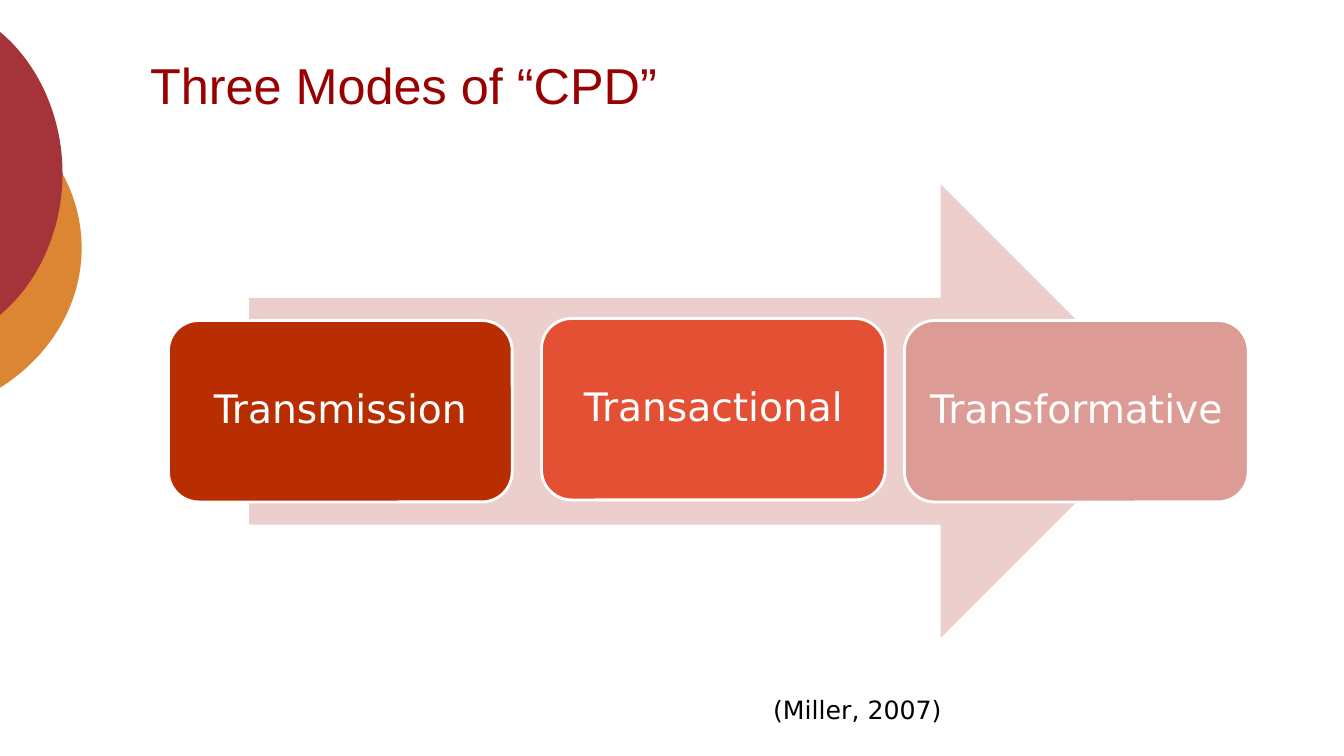
from dataclasses import dataclass

from lxml.etree import SubElement as Sub
from pptx import Presentation
from pptx.dml.color import RGBColor
from pptx.enum.shapes import MSO_SHAPE as SHAPE
from pptx.enum.text import MSO_ANCHOR as ANCHOR, MSO_AUTO_SIZE as AUTO, PP_ALIGN as ALIGN
from pptx.oxml.ns import qn
from pptx.util import Pt

PX = 9144


@dataclass(frozen=True)
class Theme:
    """Colours, fonts and type sizes of the slide."""
    orange: str = "DC8633"
    crimson: str = "A4343A"
    title: str = "990000"
    arrow: str = "ECCECC"
    modes: tuple = ("B92E00", "E35033", "DD9B95")
    white: str = "FFFFFF"
    black: str = "000000"
    title_font: str = "Arial"
    body_font: str = "DejaVu Sans"
    title_pt: int = 36
    mode_pt: int = 28
    cite_pt: int = 18


THEME = Theme()


def px(*lengths):
    """Turn pixel lengths into EMU."""
    return [n * PX for n in lengths]


def paint(sp, color, line=None):
    """Give a shape a plain fill, an optional outline and no shadow."""
    sp.shadow.inherit = False
    sp.fill.solid()
    sp.fill.fore_color.rgb = RGBColor.from_string(color)
    if line:
        sp.line.color.rgb = RGBColor.from_string(line)
        sp.line.width = Pt(2)
    else:
        sp.line.fill.background()


def write(sp, text, font, size, color, align=ALIGN.LEFT, anchor=ANCHOR.TOP):
    """Write one styled paragraph into a shape and return it."""
    tf = sp.text_frame
    tf.word_wrap = True
    tf.vertical_anchor = anchor
    p = tf.paragraphs[0]
    p.text = text
    p.alignment = align
    p.font.name = font
    p.font.size = Pt(size)
    p.font.color.rgb = RGBColor.from_string(color)
    return p


def add_edge_disc(s, box, curve, color):
    """Draw a disc cut by the left edge from the Bezier curve of its upper half."""
    left, top, width, height = box
    right, bottom = left + width, top + height
    builder = s.shapes.build_freeform(left, top, scale=PX)
    builder.add_line_segments([(right, top), (right, bottom), (left, bottom)])
    sp = builder.convert_to_shape()
    paint(sp, color)

    middle = curve[-1][1]
    lower = [(x, 2 * middle - y) for x, y in curve[-2::-1]]
    outline = next(sp.element.iter(qn("a:path")))
    for child in list(outline):
        outline.remove(child)
    for tag, points in (("moveTo", curve[:1]), ("cubicBezTo", curve[1:]),
                        ("cubicBezTo", lower), ("close", ())):
        step = Sub(outline, qn(f"a:{tag}"))
        for x, y in points:
            Sub(step, qn("a:pt"), x=str(x - left), y=str(y - top))


def add_label(s, box, text, **style):
    """Add a text box with one paragraph and return its text frame."""
    sp = s.shapes.add_textbox(*px(*box))
    write(sp, text, **style)
    return sp.text_frame


def add_mode(s, left, top, text, color):
    """Add a rounded box naming one mode."""
    sp = s.shapes.add_shape(SHAPE.ROUNDED_RECTANGLE, *px(left, top, 341, 180))
    paint(sp, color, THEME.white)
    tf = sp.text_frame
    tf.margin_left, tf.margin_top, tf.margin_right, tf.margin_bottom = px(12, 12, 12, 12)
    p = write(sp, text, THEME.body_font, THEME.mode_pt, THEME.white,
              ALIGN.CENTER, ANCHOR.MIDDLE)
    p.line_spacing = 0.9


def main():
    """Build and save the slide."""
    prs = Presentation()
    prs.slide_width, prs.slide_height = px(1333, 750)
    s = prs.slides.add_slide(prs.slide_layouts[6])

    add_edge_disc(s, (-310, 75, 391, 342),
                  ((-2, 106), (50, 138), (81, 190), (81, 246)), THEME.orange)
    add_edge_disc(s, (-233, 0, 294, 345),
                  ((-2, 30), (38, 62), (62, 116), (62, 172)), THEME.crimson)
    add_label(s, (139, 36, 1126, 95), "Three Modes of “CPD”", font=THEME.title_font,
              size=THEME.title_pt, color=THEME.title, anchor=ANCHOR.MIDDLE)

    arrow = s.shapes.add_shape(SHAPE.RIGHT_ARROW, *px(247, 183, 911, 450))
    paint(arrow, THEME.arrow)
    modes = ((167, 318, "Transmission"), (537, 316, "Transactional"),
             (897, 318, "Transformative"))
    for (left, top, text), color in zip(modes, THEME.modes):
        add_mode(s, left, top, text, color)

    tf = add_label(s, (757, 684, 438, 40), "(Miller, 2007)", font=THEME.body_font,
                   size=THEME.cite_pt, color=THEME.black)
    tf.auto_size = AUTO.SHAPE_TO_FIT_TEXT
    prs.save("out.pptx")


if __name__ == "__main__":
    main()
